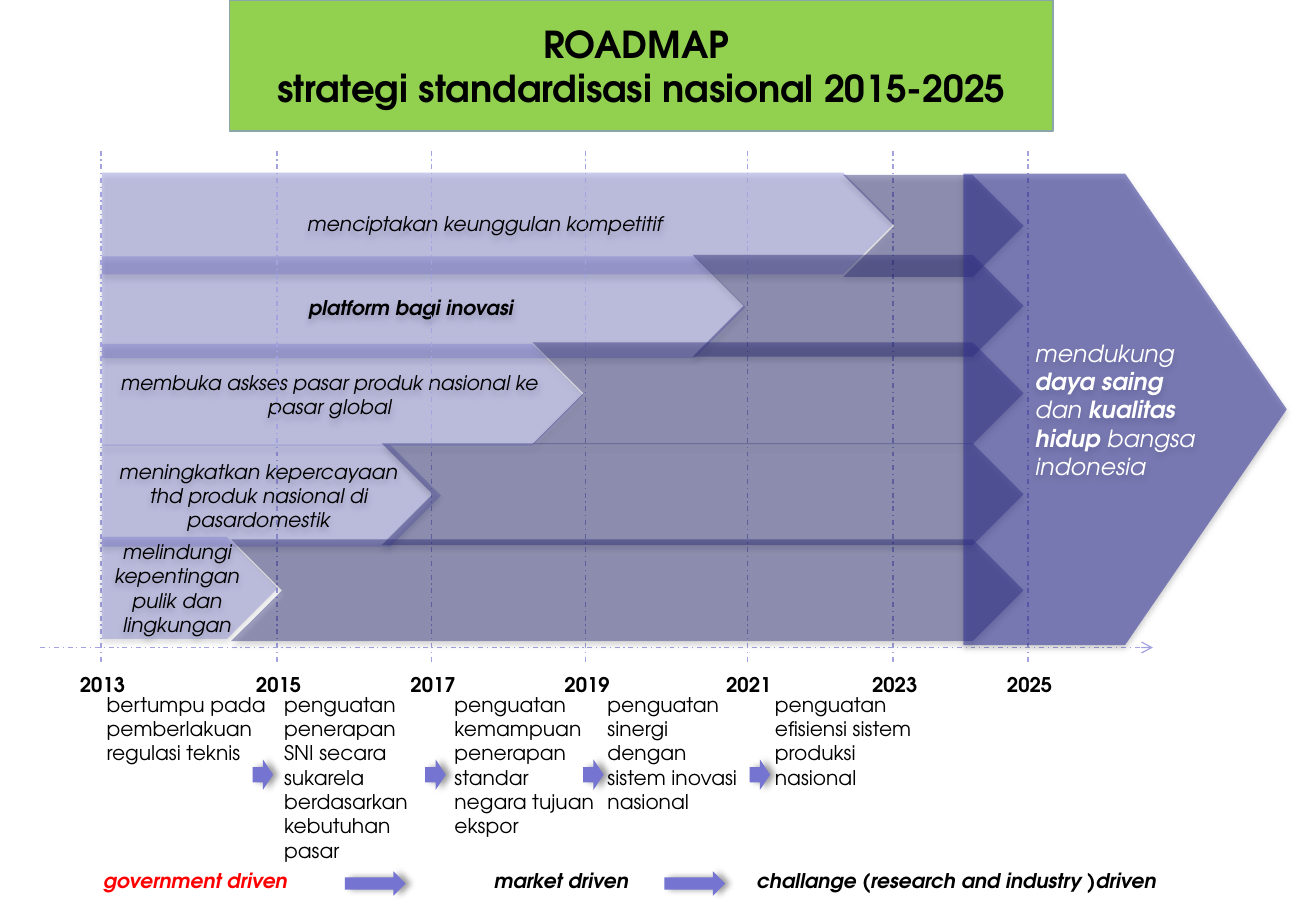
from dataclasses import dataclass

import lxml.etree
import pptx
import pptx.dml.color
import pptx.enum.dml
import pptx.enum.shapes
import pptx.enum.text
import pptx.oxml.ns
import pptx.util

Cm = pptx.util.Cm
qn = pptx.oxml.ns.qn
Preset = pptx.enum.shapes.MSO_SHAPE
Align = pptx.enum.text.PP_ALIGN


@dataclass(frozen=True)
class Theme:
    font: str = "TeX Gyre Adventor"
    title_size: int = 22
    goal_size: int = 14
    body_size: int = 12
    title_fill: str = "92D050"
    title_line: str = "8AA6A8"
    lane: str = "7575D1"
    rest: str = "262673"
    goal: str = "333399"
    guide: str = "A3A3E0"
    ink: str = "000000"
    light: str = "FFFFFF"
    accent: str = "FF0000"


@dataclass(frozen=True)
class Box:
    """A rectangle in centimetres."""
    left: float
    top: float
    width: float
    height: float

    def inner(self, left, top, width, height):
        return Box(self.left + left, self.top + top, width, height)

    def lengths(self):
        return Cm(self.left), Cm(self.top), Cm(self.width), Cm(self.height)


THEME = Theme()
LANE_SHADOW = (32, 3.5, 2.2, 90)
ARROW_SHADOW = (40, 4, 3, 0)
LANE_HEIGHT = 2.13
# lane top, lane width, left and top of the remaining stretch, bold, text
LANES = [
    (0, 16.56, 15.5, 0.05, False, "menciptakan keunggulan kompetitif"),
    (1.75, 13.46, 12.35, 1.72, True, "platform bagi inovasi"),
    (3.58, 10.06, 9, 3.55, False,
     "membuka askses pasar produk nasional ke pasar global"),
    (5.69, 7.09, 5.85, 5.66, False,
     "meningkatkan kepercayaan thd produk nasional di pasardomestik"),
    (7.62, 3.68, 2.7, 7.67, False,
     "melindungi kepentingan pulik dan lingkungan"),
]
YEAR_OFFSETS = [1.27, 4.95, 8.18, 11.4, 14.78, 17.83, 20.65]
GOAL = [
    [("mendukung", False)],
    [("daya saing", True)],
    [("dan ", False), ("kualitas hidup ", True), ("bangsa indonesia", False)],
]
# left, width, number of lines, paragraphs
PHASES = [
    (0, 3.86, 3, "bertumpu pada pemberlakuan regulasi teknis"),
    (3.71, 3.43, 7,
     "penguatan penerapan SNI secara sukarela berdasarkan kebutuhan pasar"),
    (7.27, 3.45, 6,
     "penguatan kemampuan penerapan standar\nnegara tujuan ekspor"),
    (10.47, 3.43, 5, "penguatan sinergi dengan sistem inovasi nasional"),
    (13.97, 3.86, 4, "penguatan efisiensi sistem produksi nasional"),
]
PHASE_ARROWS = [3.3, 6.91, 10.21, 13.69]
DRIVERS = [
    (0, 4.78, THEME.accent, "government driven"),
    (8.17, 4.78, THEME.ink, "market driven"),
    (13.66, 9.4, THEME.ink, "challange (research and industry )driven"),
]
DRIVER_ARROWS = [5.3, 11.98]


def rgb(value):
    return pptx.dml.color.RGBColor.from_string(value)


def style_font(font, size=THEME.body_size, color=THEME.ink, bold=False, italic=False):
    font.name, font.size = THEME.font, pptx.util.Pt(size)
    font.bold, font.italic = bold, italic
    font.color.rgb = rgb(color)


def write(shape, text, align=Align.LEFT, **style):
    shape.text_frame.text = text
    for para in shape.text_frame.paragraphs:
        para.alignment = align
        for span in para.runs:
            style_font(span.font, **style)


def add_block(page, preset, box, fill, opacity=100, shadow=None):
    """Add an unlined shape; shadow is opacity, blur, distance, angle."""
    shape = page.shapes.add_shape(preset, *box.lengths())
    shape.fill.solid()
    shape.fill.fore_color.rgb = rgb(fill)
    shape.line.fill.background()
    shape.shadow.inherit = False
    properties = shape.element.spPr
    if opacity < 100:
        color = properties.find(qn("a:solidFill"))[0]
        lxml.etree.SubElement(color, qn("a:alpha"), val=str(opacity * 1000))
    if shadow:
        strength, blur, distance, angle = shadow
        outer = lxml.etree.SubElement(
            properties.find(qn("a:effectLst")), qn("a:outerShdw"),
            blurRad=str(pptx.util.Pt(blur)), dist=str(pptx.util.Pt(distance)),
            dir=str(angle * 60000), rotWithShape="0")
        color = lxml.etree.SubElement(outer, qn("a:srgbClr"), val=THEME.ink)
        lxml.etree.SubElement(color, qn("a:alpha"), val=str(strength * 1000))
    shape.text_frame.vertical_anchor = pptx.enum.text.MSO_ANCHOR.MIDDLE
    return shape


def add_label(page, box, text, wrap=True, **style):
    label = page.shapes.add_textbox(*box.lengths())
    label.text_frame.word_wrap = wrap
    label.text_frame.auto_size = pptx.enum.text.MSO_AUTO_SIZE.SHAPE_TO_FIT_TEXT
    write(label, text, **style)


def add_guide(page, start, end):
    guide = page.shapes.add_connector(
        pptx.enum.shapes.MSO_CONNECTOR.STRAIGHT,
        *(Cm(value) for value in start + end))
    guide.line.color.rgb = rgb(THEME.guide)
    guide.line.width = pptx.util.Pt(0.75)
    guide.line.dash_style = pptx.enum.dml.MSO_LINE.DASH_DOT
    lxml.etree.SubElement(guide.element.spPr, qn("a:effectLst"))
    return guide


def draw_title(page, box):
    title = add_block(page, Preset.RECTANGLE, box, THEME.title_fill)
    title.line.color.rgb = rgb(THEME.title_line)
    title.line.width = pptx.util.Pt(1)
    write(title, "ROADMAP \vstrategi standardisasi nasional 2015-2025",
          Align.CENTER, size=THEME.title_size, bold=True)


def draw_lanes(page, box, lanes):
    for top, width, _, _, bold, text in lanes:
        lane = add_block(page, Preset.PENTAGON, box.inner(0, top, width, LANE_HEIGHT),
                         THEME.lane, 36, LANE_SHADOW)
        write(lane, text, Align.CENTER, bold=bold, italic=True)


def draw_remainders(page, box):
    """Add the dark chevrons that continue each lane to the right edge."""
    for _, _, left, top, _, _ in LANES:
        add_block(page, Preset.CHEVRON,
                  box.inner(left, top, box.width - left, LANE_HEIGHT),
                  THEME.rest, 43, LANE_SHADOW)


def draw_timeline(page, box):
    axis_y = box.top + 10.39
    axis = add_guide(page, (box.left, axis_y), (box.left + box.width, axis_y))
    lxml.etree.SubElement(axis.element.spPr.find(qn("a:ln")), qn("a:tailEnd"), type="arrow")
    for index, offset in enumerate(YEAR_OFFSETS):
        x = box.left + offset
        add_guide(page, (x, box.top), (x, box.top + box.height))
        add_label(page, box.inner(offset - 0.7, box.height + 0.07, 1.47, 0.76),
                  str(2013 + 2 * index), wrap=False, align=Align.CENTER, bold=True)


def draw_goal(page, box):
    goal = add_block(page, Preset.PENTAGON, box, THEME.goal, 56, LANE_SHADOW)
    frame = goal.text_frame
    frame.margin_left = frame.margin_top = frame.margin_right = frame.margin_bottom = 0
    frame.text = "\n" * (len(GOAL) - 1)
    for para, spans in zip(frame.paragraphs, GOAL):
        para.alignment = Align.LEFT
        properties = para._p.get_or_add_pPr()
        properties.set("marL", str(Cm(1.5)))
        properties.set("indent", "0")
        for text, bold in spans:
            span = para.add_run()
            span.text = text
            style_font(span.font, THEME.goal_size, THEME.light, bold, True)


def draw_phases(page, box):
    for left, width, lines, text in PHASES:
        add_label(page, box.inner(left, 0, width, 0.29 + 0.51 * lines), text)
    for left in PHASE_ARROWS:
        add_block(page, Preset.RIGHT_ARROW, box.inner(left, 1.53, 0.43, 0.64),
                  THEME.lane, shadow=ARROW_SHADOW)


def draw_drivers(page, box):
    for left, width, color, text in DRIVERS:
        add_label(page, box.inner(left, 0, width, box.height), text,
                  color=color, bold=True, italic=True)
    for left in DRIVER_ARROWS:
        add_block(page, Preset.RIGHT_ARROW, box.inner(left, 0.18, 1.27, 0.51),
                  THEME.lane, shadow=ARROW_SHADOW)


def main():
    deck = pptx.Presentation()
    deck.slide_width, deck.slide_height = Cm(27.51), Cm(19.05)
    page = deck.slides.add_slide(deck.slide_layouts[6])
    lanes_box = Box(2.13, 3.61, 19.27, 9.75)
    draw_title(page, Box(4.8, 0, 17.22, 2.74))
    draw_lanes(page, lanes_box, LANES[:3])
    draw_timeline(page, Box(0.84, 3.15, 23.26, 10.72))
    draw_lanes(page, lanes_box, LANES[3:])
    draw_remainders(page, lanes_box)
    draw_goal(page, Box(20.14, 3.63, 6.76, 9.86))
    draw_phases(page, Box(1.98, 14.35, 17.83, 3.86))
    draw_drivers(page, Box(1.91, 18.04, 23.06, 0.76))
    deck.save("out.pptx")


if __name__ == "__main__":
    main()
